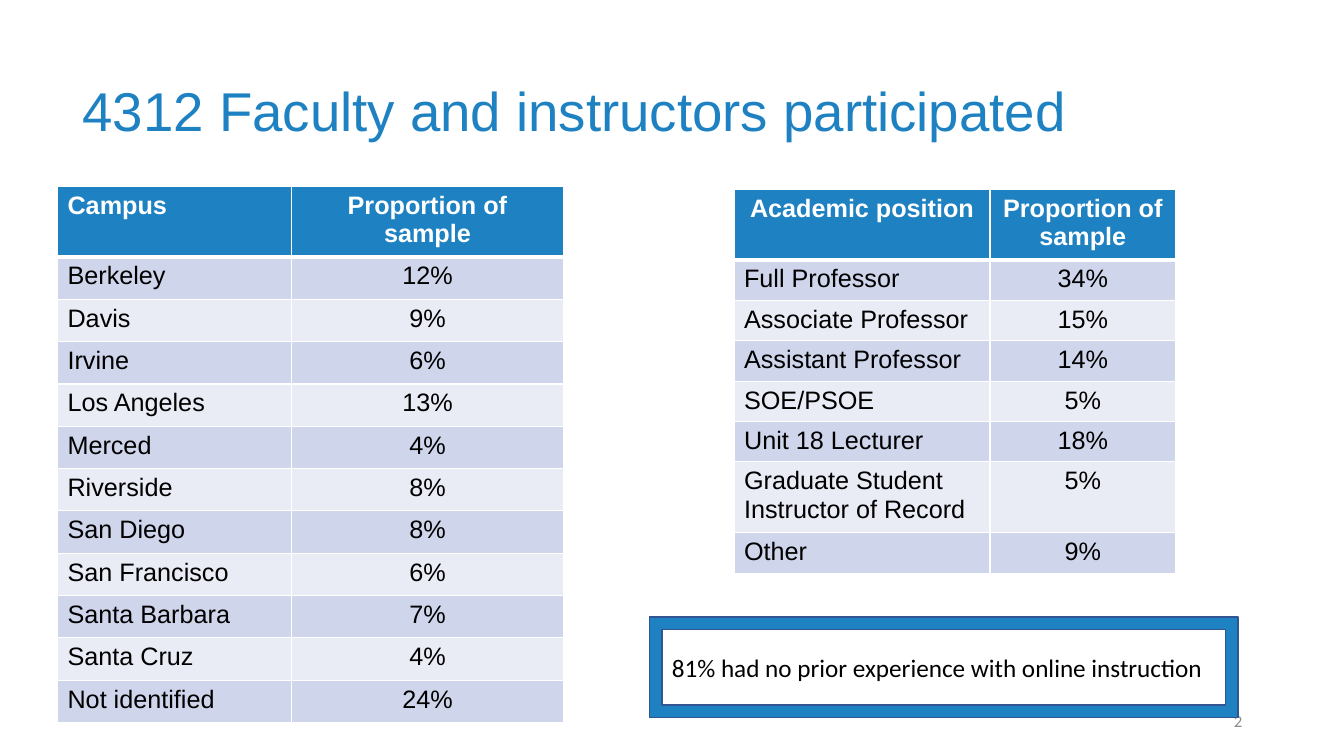
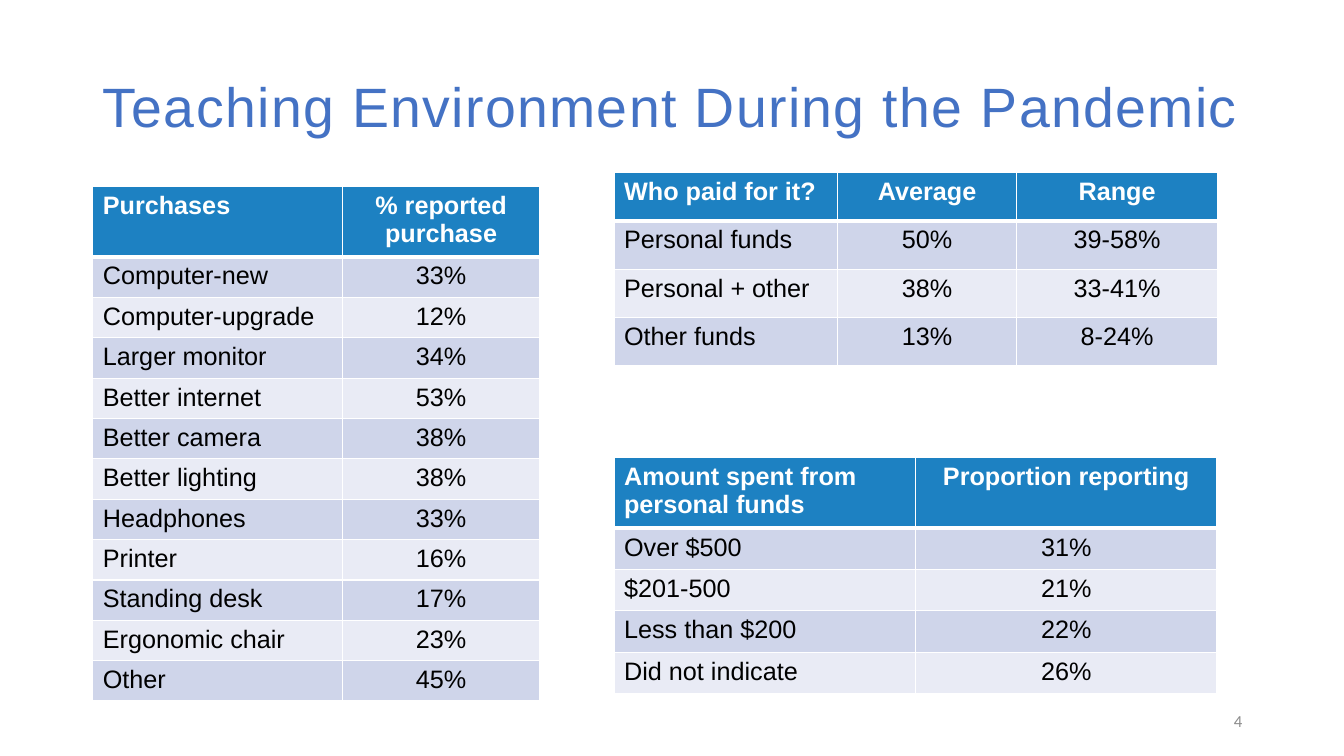
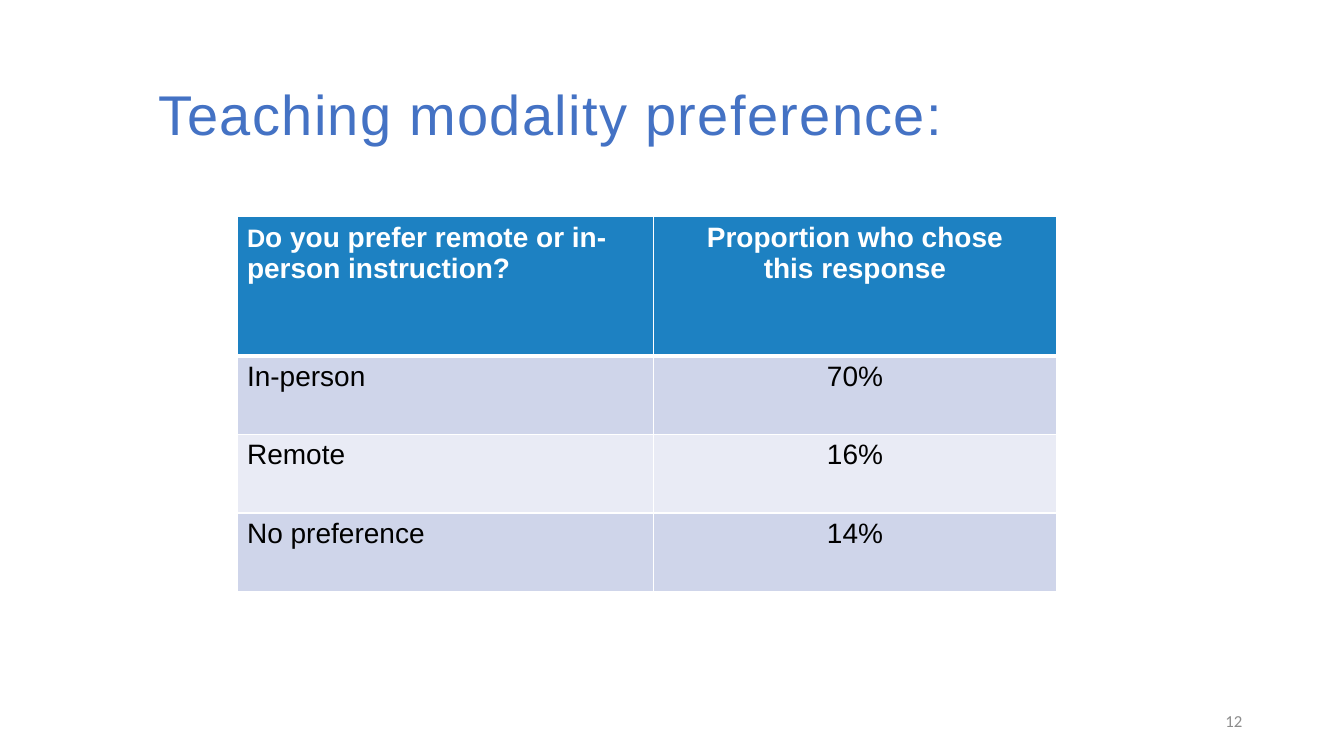
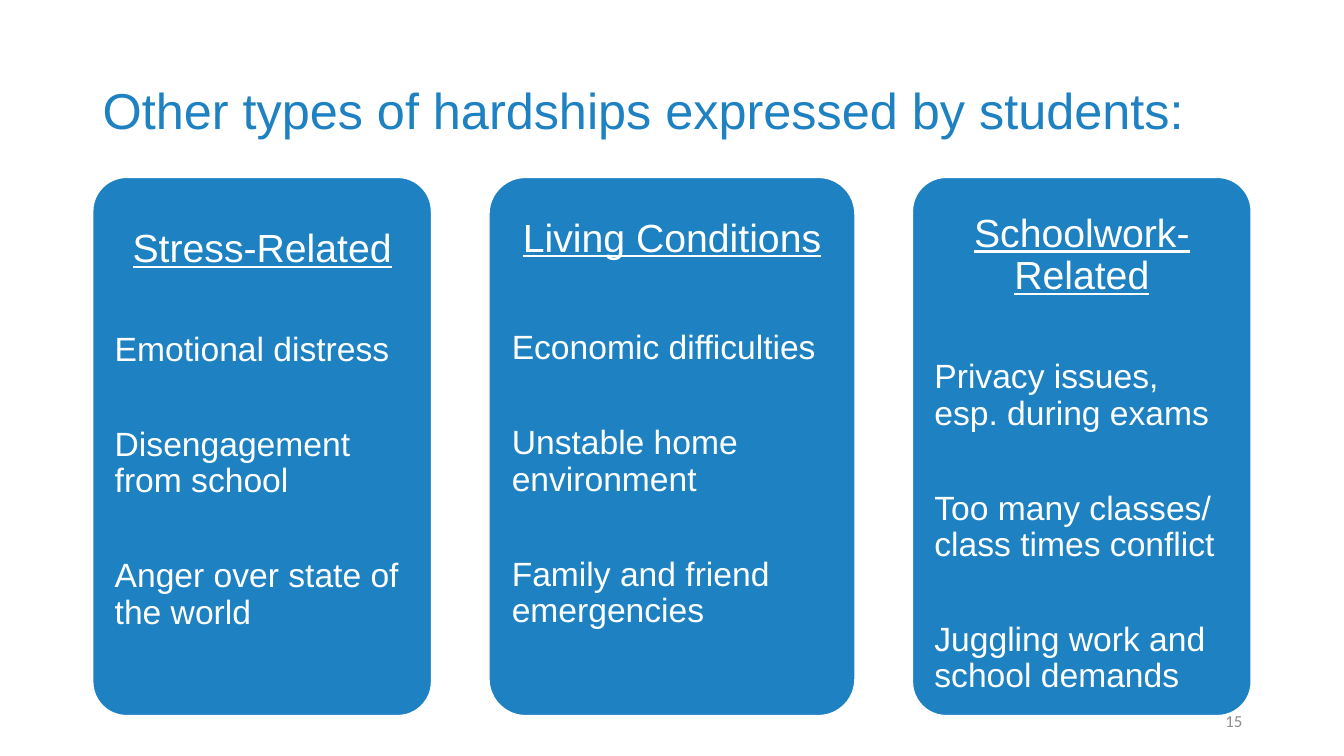
"""Builds four survey result slides with tables, a callout and cards."""
from dataclasses import dataclass

from lxml.etree import SubElement
from pptx import Presentation
from pptx.dml.color import RGBColor as Color
from pptx.enum.shapes import MSO_SHAPE as Preset
from pptx.enum.text import MSO_ANCHOR as Anchor, PP_ALIGN as Align
from pptx.oxml.ns import qn
from pptx.util import Inches, Pt


@dataclass(frozen=True)
class Theme:
    """Colours, fonts and type sizes shared by all pages."""
    blue: str = "1D81C2"
    accent: str = "4472C4"
    outline: str = "325491"
    band_dark: str = "CFD5EA"
    band_light: str = "E9EBF5"
    white: str = "FFFFFF"
    black: str = "000000"
    grey: str = "8C8C8C"
    main_font: str = "Arial"
    small_font: str = "Calibri"
    table_size: float = 18
    large_table_size: float = 20
    heading_size: float = 28
    item_size: float = 24
    number_size: float = 12


THEME = Theme()


def style(para, size, color, name=THEME.main_font, bold=False, align=Align.LEFT):
    """Set the font and alignment of a paragraph."""
    font = para.font
    font.name, font.size, font.bold = name, Pt(size), bold
    font.color.rgb = Color.from_string(color)
    para.alignment = align


def add_text(page, text, left, top, width, height):
    """Add a wrapping, vertically centred text box and return its paragraph."""
    box = page.shapes.add_textbox(Inches(left), Inches(top), Inches(width), Inches(height))
    frame = box.text_frame
    frame.word_wrap = True
    frame.vertical_anchor = Anchor.MIDDLE
    frame.text = text
    return frame.paragraphs[0]


def add_page(deck, title, number, left, top, size, color, tracking=0):
    """Add a page with its title and page number."""
    page = deck.slides.add_slide(deck.slide_layouts[6])
    para = add_text(page, title, left, top, 11.7, 1.45)
    style(para, size, color)
    para.line_spacing = 0.9
    if tracking:
        para.font._element.set("spc", str(tracking * 100))
    para = add_text(page, str(number), 9.42, 6.95, 3, 0.4)
    style(para, THEME.number_size, THEME.grey, THEME.small_font, align=Align.RIGHT)
    return page


def add_borders(cell, top, bottom):
    """Give a cell white borders, with widths in points above and below."""
    props = cell._tc.get_or_add_tcPr()
    for side, width in (("L", 1), ("R", 1), ("T", top), ("B", bottom)):
        line = SubElement(props, qn(f"a:ln{side}"), w=str(Pt(width)))
        fill = SubElement(line, qn("a:solidFill"))
        SubElement(fill, qn("a:srgbClr"), val=THEME.white)


def add_table(page, left, top, widths, heights, rows, size=THEME.table_size,
              first_header=Align.LEFT):
    """Add a banded table with a blue header row."""
    shape = page.shapes.add_table(len(rows), len(widths), Inches(left), Inches(top),
                                  Inches(sum(widths)), Inches(sum(heights)))
    table = shape.table
    for column, width in zip(table.columns, widths):
        column.width = Inches(width)
    for r, (values, height) in enumerate(zip(rows, heights)):
        table.rows[r].height = Inches(height)
        header = r == 0
        band = THEME.band_dark if r % 2 else THEME.band_light
        for c, value in enumerate(values):
            cell = table.cell(r, c)
            cell.text = value
            add_borders(cell, 3 if r == 1 else 1, 3 if header else 1)
            cell.fill.solid()
            cell.fill.fore_color.rgb = Color.from_string(THEME.blue if header else band)
            first_align = first_header if header else Align.LEFT
            for para in cell.text_frame.paragraphs:
                style(para, size, THEME.white if header else THEME.black, bold=header,
                      align=Align.CENTER if c else first_align)
    return table


def add_panel(page, preset, left, top, width, height, outline):
    """Add a blue preset shape and return it."""
    panel = page.shapes.add_shape(preset, Inches(left), Inches(top),
                                  Inches(width), Inches(height))
    panel.shadow.inherit = False
    panel.fill.solid()
    panel.fill.fore_color.rgb = Color.from_string(THEME.blue)
    panel.line.color.rgb = Color.from_string(outline)
    panel.line.width = Pt(1)
    panel.text_frame.word_wrap = True
    return panel


def add_callout(page, text):
    """Add a framed statement."""
    callout = add_panel(page, Preset.FRAME, 6.44, 6.12, 5.84, 1, THEME.outline)
    callout.text_frame.text = text
    callout.text_frame.vertical_anchor = Anchor.MIDDLE
    style(callout.text_frame.paragraphs[0], THEME.table_size, THEME.black, THEME.small_font)


def add_card(page, left, width, inset, gap, heading, items):
    """Add a rounded card with an underlined heading and spaced items."""
    card = add_panel(page, Preset.ROUNDED_RECTANGLE, left, 1.76, width, 5.34, THEME.white)
    card.adjustments[0] = 0.1
    frame = card.text_frame
    frame.vertical_anchor = Anchor.TOP
    frame.margin_left = frame.margin_right = frame.margin_bottom = Inches(0.12)
    frame.margin_top = Inches(inset)
    frame.text = "\n".join([heading, *items])
    title, *paras = frame.paragraphs
    style(title, THEME.heading_size, THEME.white, align=Align.CENTER)
    title.font.underline = True
    title.line_spacing = 0.9
    title.space_after = Pt(gap)
    for para in paras:
        style(para, THEME.item_size, THEME.white)
        para.line_spacing = 0.9
        para.space_after = Pt(42 if para is not paras[-1] else 0)


def add_participants(deck):
    """Add the page on who took part."""
    page = add_page(deck, "4312 Faculty and instructors participated", 2,
                    0.72, 0.4, 39, THEME.blue)
    add_table(page, 0.57, 1.85, [2.32, 2.7], [0.66] + [0.42] * 11, [
        ("Campus", "Proportion of sample"),
        ("Berkeley", "12%"),
        ("Davis", "9%"),
        ("Irvine", "6%"),
        ("Los Angeles", "13%"),
        ("Merced", "4%"),
        ("Riverside", "8%"),
        ("San Diego", "8%"),
        ("San Francisco", "6%"),
        ("Santa Barbara", "7%"),
        ("Santa Cruz", "4%"),
        ("Not identified", "24%"),
    ])
    add_table(page, 7.28, 1.88, [2.54, 1.84], [0.7] + [0.4] * 5 + [0.7, 0.41], [
        ("Academic position", "Proportion of sample"),
        ("Full Professor", "34%"),
        ("Associate Professor", "15%"),
        ("Assistant Professor", "14%"),
        ("SOE/PSOE", "5%"),
        ("Unit 18 Lecturer", "18%"),
        ("Graduate Student Instructor of Record", "5%"),
        ("Other", "9%"),
    ], first_header=Align.CENTER)
    add_callout(page, "81% had no prior experience with online instruction")


def add_environment(deck):
    """Add the page on purchases and who paid."""
    page = add_page(deck, "Teaching Environment During the Pandemic", 4,
                    0.92, 0.36, 39.6, THEME.accent, tracking=1)
    add_table(page, 0.92, 1.85, [2.48, 1.95], [0.66] + [0.4] * 11, [
        ("Purchases", "% reported purchase"),
        ("Computer-new", "33%"),
        ("Computer-upgrade", "12%"),
        ("Larger monitor", "34%"),
        ("Better internet", "53%"),
        ("Better camera", "38%"),
        ("Better lighting", "38%"),
        ("Headphones", "33%"),
        ("Printer", "16%"),
        ("Standing desk", "17%"),
        ("Ergonomic chair", "23%"),
        ("Other", "45%"),
    ])
    add_table(page, 6.09, 1.71, [2.22, 1.77, 2], [0.48] * 4, [
        ("Who paid for it?", "Average", "Range"),
        ("Personal funds", "50%", "39-58%"),
        ("Personal + other", "38%", "33-41%"),
        ("Other funds", "13%", "8-24%"),
    ])
    add_table(page, 6.09, 4.54, [2.99, 2.99], [0.66] + [0.41] * 4, [
        ("Amount spent from personal funds", "Proportion reporting"),
        ("Over $500", "31%"),
        ("$201-500", "21%"),
        ("Less than $200", "22%"),
        ("Did not indicate", "26%"),
    ])


def add_preference(deck):
    """Add the page on remote or in-person teaching."""
    page = add_page(deck, "Teaching modality preference:", 12,
                    1.47, 0.44, 40, THEME.accent, tracking=1)
    table = add_table(page, 2.35, 2.15, [4.13, 4], [1.38] + [0.78] * 3, [
        ("D", "Proportion who chose\nthis response"),
        ("In-person", "70%"),
        ("Remote", "16%"),
        ("No preference", "14%"),
    ], size=THEME.large_table_size)
    question = table.cell(0, 0).text_frame.paragraphs[0]
    question.runs[0].font.size = Pt(THEME.table_size)
    span = question.add_run()
    span.text = "o you prefer remote or in-person instruction?"


def add_hardships(deck):
    """Add the page of hardship cards."""
    page = add_page(deck, "Other types of hardships expressed by students:", 15,
                    0.92, 0.4, 36, THEME.blue)
    cards = [
        (3.36, 0.41, 44, "Stress-Related",
         ["Emotional distress", "Disengagement from school", "Anger over state of the world"]),
        (3.63, 0.3, 50, "Living Conditions",
         ["Economic difficulties", "Unstable home environment", "Family and friend emergencies"]),
        (3.36, 0.26, 44, "Schoolwork-Related",
         ["Privacy issues, esp. during exams", "Too many classes/ class times conflict",
          "Juggling work and school demands"]),
    ]
    left = 0.92
    for width, *content in cards:
        add_card(page, left, width, *content)
        left += width + 0.57


def main():
    """Build and save the deck."""
    deck = Presentation()
    deck.slide_width, deck.slide_height = Inches(13.33), Inches(7.5)
    add_participants(deck)
    add_environment(deck)
    add_preference(deck)
    add_hardships(deck)
    deck.save("out.pptx")


if __name__ == "__main__":
    main()
